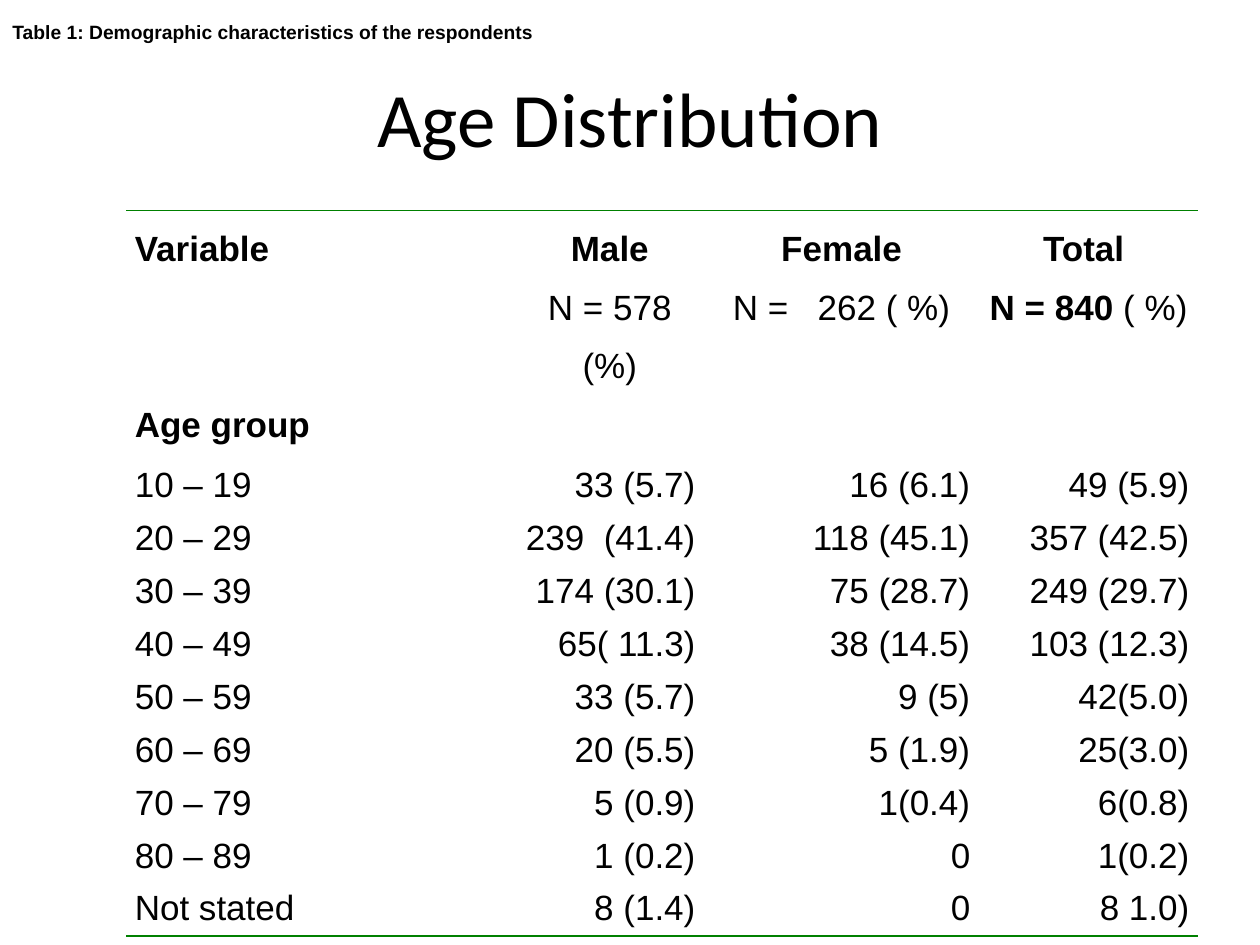
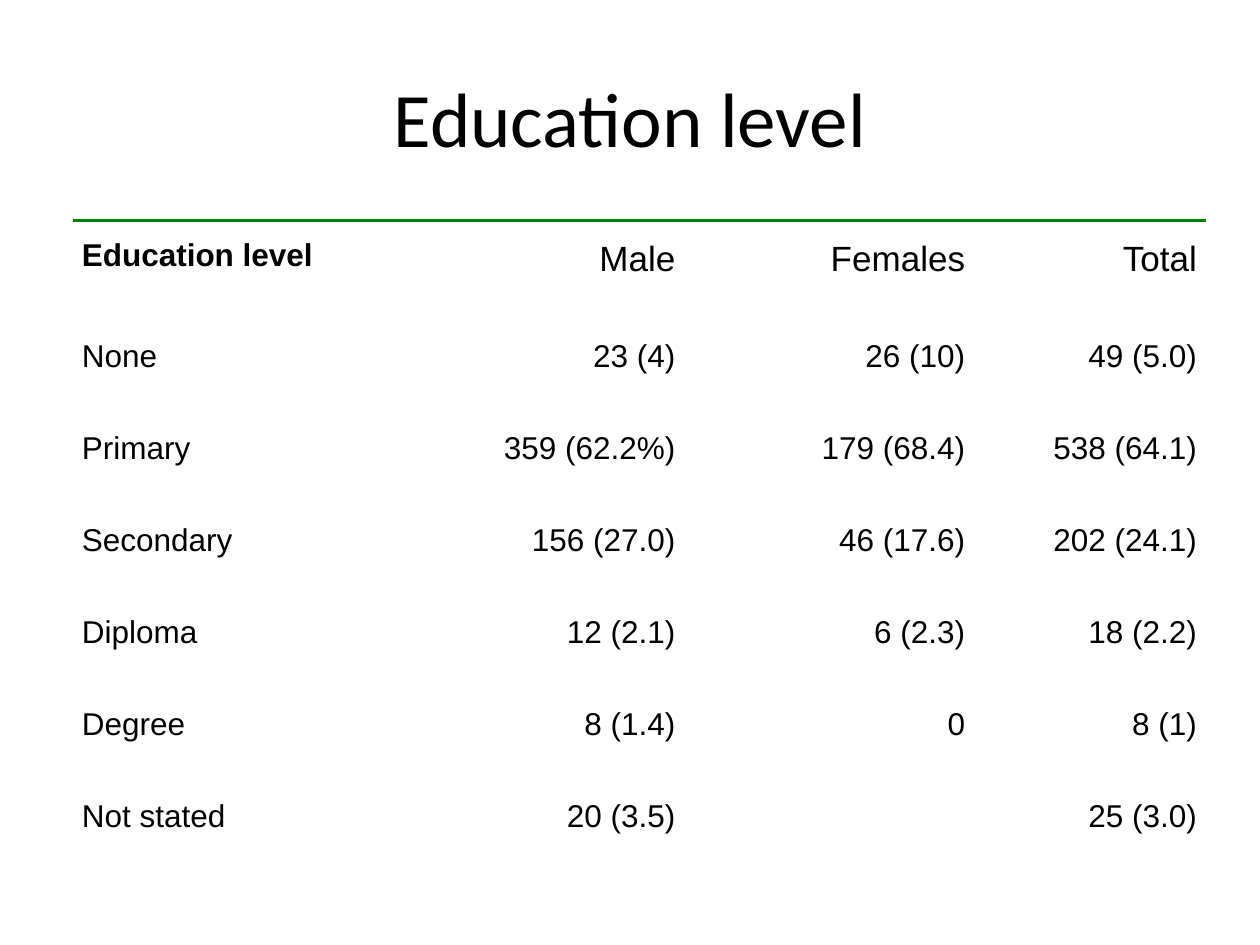
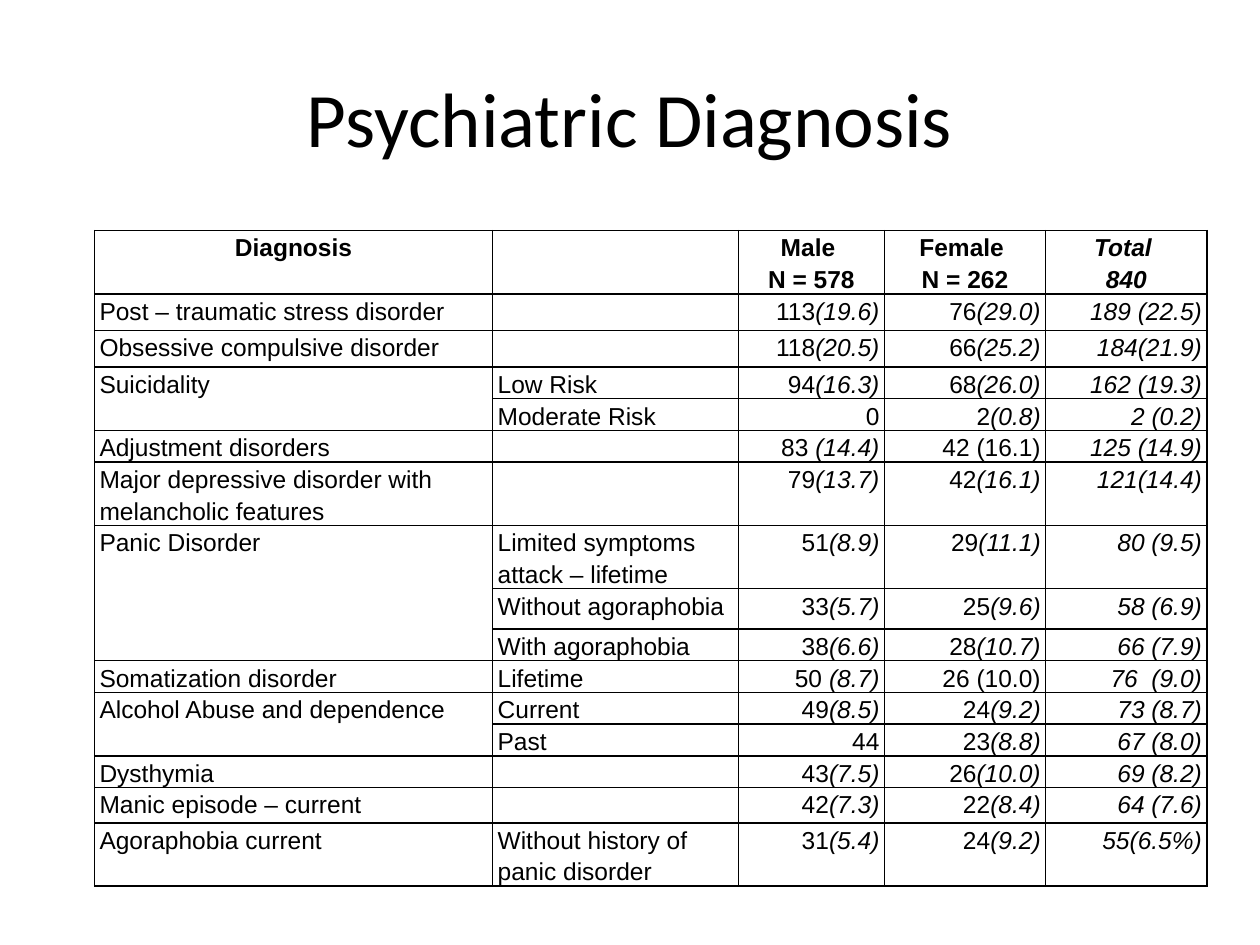
import pptx
import pptx.util
import pptx.dml.color
import pptx.enum.text
import pptx.oxml.ns
from lxml import etree

Inches = pptx.util.Inches
Pt = pptx.util.Pt
qn = pptx.oxml.ns.qn
ALIGN = pptx.enum.text.PP_ALIGN
MIDDLE = pptx.enum.text.MSO_ANCHOR.MIDDLE
LEFT, CENTER, RIGHT, JUSTIFY = ALIGN.LEFT, ALIGN.CENTER, ALIGN.RIGHT, ALIGN.JUSTIFY
BLACK, GREEN = "000000", "008000"
NO_GRID_STYLE = "{2D5ABB26-0587-4C30-8999-92F81FD0307C}"


def style_font(font, color, **values):
    font.color.rgb = pptx.dml.color.RGBColor.from_string(color)
    for name, value in values.items():
        setattr(font, name, value)


def add_border(cell, side, color, points):
    line = etree.SubElement(cell._tc.get_or_add_tcPr(), qn("a:ln" + side), w=str(Pt(points)))
    fill = etree.SubElement(line, qn("a:solidFill"))
    etree.SubElement(fill, qn("a:srgbClr"), val=color)


# Runs are split by "|"; a leading "*" is bold, "_" italic.
age = {
    "title": "Age Distribution",
    "at": (1, 1.67, 8.5, 5.84),
    "columns": [3.09, 1.5, 2.18, 1.74],
    "heights": [1.08, 0.59] + [0.42] * 9,
    "header_align": [JUSTIFY, CENTER, CENTER, CENTER],
    "body_align": [LEFT, RIGHT, RIGHT, RIGHT],
    "header_size": 20, "size": 20, "margin": 0.07,
    "spacing": [1.5, 1.5] + [1.15] * 9,
    "borders": {0: [("T", GREEN, 1)], 10: [("B", GREEN, 1.5)]},
    "merges": [],
    "rows": [
        ["*Variable", "*Male\nN = 578 (%)", "*Female\nN =   262 ( %)", "*Total \n*N = 840 |( %)"],
        ["*Age group", "", "", ""],
        ["10 – 19", "33 (5.7)", "16 (6.1)", "49 (5.9)"],
        ["20 – 29", "239  (41.4)", "118 (45.1)", "357 (42.5)"],
        ["30 – 39", "174 (30.1)", "75 (28.7)", "249 (29.7)"],
        ["40 – 49", "65( 11.3)", "38 (14.5)", "103 (12.3)"],
        ["50 – 59", "33 (5.7)", "9 (5)", "42(5.0)"],
        ["60 – 69", "20 (5.5)", "5 (1.9)", "25(3.0)"],
        ["70 – 79", "5 (0.9)", "1(0.4)", "6(0.8)"],
        ["80 – 89", "1 (0.2)", "0", "1(0.2)"],
        ["Not stated", "8 (1.4)", "0", "8 1.0)"],
    ],
}

education = {
    "title": "Education level",
    "at": (0.58, 1.75, 9, 5.25),
    "columns": [3.27, 1.58, 2.3, 1.84],
    "heights": [0.8] + [0.73] * 5 + [0.8],
    "header_align": [JUSTIFY, RIGHT, RIGHT, RIGHT],
    "body_align": [JUSTIFY, RIGHT, RIGHT, RIGHT],
    "header_size": 20, "size": 18, "margin": 0.07,
    "spacing": [1.5] * 7,
    "borders": {0: [("T", GREEN, 1.5)]},
    "merges": [],
    "rows": [
        ["*Education level", "Male", "Females", "Total"],
        ["None", "23 (4)", "26 (10)", "49 (5.0)"],
        ["Primary", "359 (62.2%)", "179 (68.4)", "538 (64.1)"],
        ["Secondary ", "156 (27.0)", "46 (17.6)", "202 (24.1)"],
        ["Diploma", "12 (2.1)", "6 (2.3)", "18 (2.2)"],
        ["Degree ", "8 (1.4)", "0", "8 (1)"],
        ["Not stated", "20 (3.5)", "", "25 (3.0)"],
    ],
}

diagnosis = {
    "title": "Psychiatric Diagnosis",
    "at": (0.75, 1.83, 8.83, 5.47),
    "columns": [3.16, 1.95, 1.16, 1.28, 1.28],
    "heights": [0.32, 0.29, 0.29, 0.16, 0.16, 0.18, 0.34, 0.32,
                0.32, 0.16, 0.16, 0.16, 0.16, 0.18, 0.28, 0.32],
    "header_align": [CENTER] * 5,
    "body_align": [LEFT, LEFT, RIGHT, RIGHT, RIGHT],
    "header_size": 14, "size": 14, "margin": 0.04,
    "spacing": [1.15] * 16,
    "borders": {row: [(side, BLACK, 1) for side in "LRTB"] for row in range(16)},
    "merges": [(3, 4), (7, 9), (11, 12)],
    "rows": [
        ["*Diagnosis", "", "*Male \n*N = 578", "*Female \n*N = 262", "*_Total \n*_840"],
        ["Post – traumatic stress disorder", "", "113|_(19.6)", "76|_(29.0)", "_189 (22.5)"],
        ["Obsessive compulsive disorder", "", "118|_(20.5)", "66|_(25.2)", "_184(21.9)"],
        ["Suicidality", "Low Risk", "94|_(16.3)", "68|_(26.0)", "_162 (19.3)"],
        ["", "Moderate Risk", "0", "2|_(0.8)", "_2 (0.2)"],
        ["Adjustment disorders", "", "83 |_(14.4)", "42 (16.1)", "_125 (14.9)"],
        ["Major depressive disorder with melancholic features", "", "79|_(13.7)", "42|_(16.1)", "_121(14.4)"],
        ["Panic Disorder", "Limited symptoms attack – lifetime", "51|_(8.9)", "29|_(11.1)", "_80 (9.5)"],
        ["", "Without agoraphobia", "33|_(5.7)", "25|_(9.6)", "_58 (6.9)"],
        ["", "With agoraphobia", "38|_(6.6)", "28|_(10.7)", "_66 (7.9)"],
        ["Somatization disorder", "Lifetime", "50 |_(8.7)", "26 (10.0)", "_76  (9.0)"],
        ["Alcohol Abuse and dependence", "Current", "49|_(8.5)", "24|_(9.2)", "_73 (8.7)"],
        ["", "Past", "44", "23|_(8.8)", "_67 (8.0)"],
        ["Dysthymia", "", "43|_(7.5)", "26|_(10.0)", "_69 (8.2)"],
        ["Manic episode – current", "", "42|_(7.3)", "22|_(8.4)", "_64 (7.6)"],
        ["Agoraphobia current", "Without history of panic disorder", "31|_(5.4)", "24|_(9.2)", "_55(6.5%)"],
    ],
}
education["sizes"] = {(0, 0): 18}

prs = pptx.Presentation()
prs.slide_width = Inches(10)
prs.slide_height = Inches(7.5)

for topic in (age, education, diagnosis):
    slide = prs.slides.add_slide(prs.slide_layouts[5])
    heading = slide.shapes.title
    heading_place = {"left": 0.5, "top": 0.3, "width": 9, "height": 1.25}
    for name, value in heading_place.items():
        setattr(heading, name, Inches(value))
    heading.text_frame.text = topic["title"]
    heading.text_frame.vertical_anchor = MIDDLE
    heading.text_frame.paragraphs[0].alignment = CENTER
    style_font(heading.text_frame.paragraphs[0].runs[0].font, BLACK, name="Calibri", size=Pt(44))

    rows = topic["rows"]
    frame = slide.shapes.add_table(len(rows), len(rows[0]), *map(Inches, topic["at"]))
    grid = frame.table
    grid.first_row = grid.horz_banding = False
    grid._tbl.tblPr.find(qn("a:tableStyleId")).text = NO_GRID_STYLE
    for column, width in zip(grid.columns, topic["columns"]):
        column.width = Inches(width)
    for row, height in zip(grid.rows, topic["heights"]):
        row.height = Inches(height)
    frame.height = Inches(topic["at"][3])
    for first, last in topic["merges"]:
        grid.cell(first, 0).merge(grid.cell(last, 0))

    for r, row in enumerate(rows):
        aligns = topic["body_align"] if r else topic["header_align"]
        row_size = topic["size"] if r else topic["header_size"]
        for c, content in enumerate(row):
            cell = grid.cell(r, c)
            size = topic.get("sizes", {}).get((r, c), row_size)
            for side, color, points in topic["borders"].get(r, []):
                add_border(cell, side, color, points)
            cell.fill.background()
            cell.margin_left = cell.margin_right = Inches(topic["margin"])
            cell.margin_top = cell.margin_bottom = 0
            for n, line in enumerate(content.split("\n")):
                paragraph = cell.text_frame.add_paragraph() if n else cell.text_frame.paragraphs[0]
                paragraph.alignment = aligns[c]
                paragraph.line_spacing = topic["spacing"][r]
                if not line:
                    etree.SubElement(paragraph._p, qn("a:endParaRPr"), sz=str(size * 100))
                    continue
                for part in line.split("|"):
                    run = paragraph.add_run()
                    run.text = part.lstrip("*_")
                    style_font(run.font, BLACK, name="Arial", size=Pt(size),
                               bold=part.startswith("*"), italic="_" in part)

caption = prs.slides[0].shapes.add_textbox(0, 0, Inches(10), Inches(0.5)).text_frame
caption.word_wrap = True
caption.vertical_anchor = MIDDLE
caption.text = "Table 1: Demographic characteristics of the respondents"
style_font(caption.paragraphs[0].runs[0].font, BLACK, name="Arial", size=Pt(11), bold=True)

prs.save("out.pptx")
